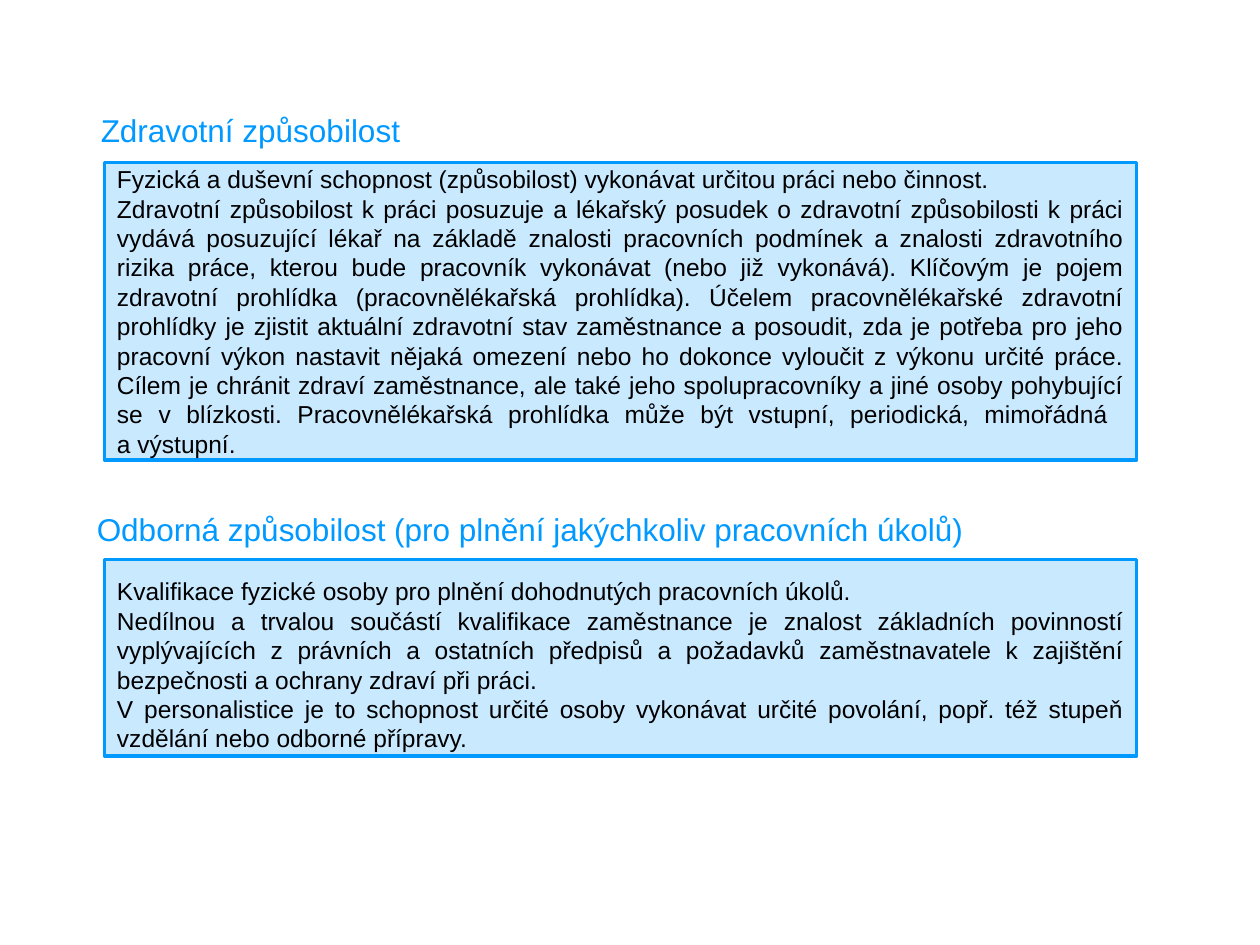
from pptx import Presentation, util as u
from pptx.dml.color import RGBColor
from pptx.enum import shapes, text

COLORS = {"accent": "0099FF", "panel": "C9E9FF", "text": "000000", "paper": "FFFFFF"}
COLS, ROWS = 100, 75
PANEL_LEFT, PANEL_WIDTH = 8.3, 81.9

HEALTH = [
    "Fyzická a duševní schopnost (způsobilost) vykonávat určitou práci nebo činnost.",
    "Zdravotní způsobilost k práci posuzuje a lékařský posudek o zdravotní způsobilosti "
    "k práci vydává posuzující lékař na základě znalosti pracovních podmínek a znalosti "
    "zdravotního rizika práce, kterou bude pracovník vykonávat (nebo již vykonává). "
    "Klíčovým je pojem zdravotní prohlídka (pracovnělékařská prohlídka). Účelem "
    "pracovnělékařské zdravotní prohlídky je zjistit aktuální zdravotní stav zaměstnance "
    "a posoudit, zda je potřeba pro jeho pracovní výkon nastavit nějaká omezení nebo ho "
    "dokonce vyloučit z výkonu určité práce. Cílem je chránit zdraví zaměstnance, ale také "
    "jeho spolupracovníky a jiné osoby pohybující se v blízkosti. Pracovnělékařská "
    "prohlídka může být vstupní, periodická, mimořádná \va výstupní.",
]
SKILLS = [
    "Kvalifikace fyzické osoby pro plnění dohodnutých pracovních úkolů.",
    "Nedílnou a trvalou součástí kvalifikace zaměstnance je znalost základních povinností "
    "vyplývajících z právních a ostatních předpisů a požadavků zaměstnavatele k zajištění "
    "bezpečnosti a ochrany zdraví při práci.",
    "V personalistice je to schopnost určité osoby vykonávat určité povolání, popř. též "
    "stupeň vzdělání nebo odborné přípravy.",
]


class Deck:
    """Holds the text style and the current slide; lengths are grid columns and rows."""

    font = "Arial"

    def __init__(self):
        self.prs = Presentation()
        self.prs.slide_width, self.prs.slide_height = u.Inches(10), u.Inches(7.5)
        self.s = self.prs.slides.add_slide(self.prs.slide_layouts[5])

    def place(self, left, top, width, height):
        dx, dy = self.prs.slide_width / COLS, self.prs.slide_height / ROWS
        return [round(v) for v in (left * dx, top * dy, width * dx, height * dy)]

    def paint(self, fmt, color):
        fmt.solid()
        fmt.fore_color.rgb = RGBColor.from_string(COLORS[color])

    def fill_text(self, sp, paragraphs, size, color, align, **frame):
        tf = sp.text_frame
        tf.text = "\n".join(paragraphs)
        for name, value in {"auto_size": text.MSO_AUTO_SIZE.NONE, **frame}.items():
            setattr(tf, name, value)
        for p in tf.paragraphs:
            p.alignment = align
            for r in p.runs:
                r.font.name, r.font.size = self.font, u.Pt(size)
                r.font.color.rgb = RGBColor.from_string(COLORS[color])

    def heading(self, words, *at, title=False):
        box = self.place(*at)
        sp = self.s.shapes.title if title else self.s.shapes.add_textbox(*box)
        sp.left, sp.top, sp.width, sp.height = box
        self.paint(sp.fill, "paper")
        self.fill_text(sp, [words], 18, "accent", text.PP_ALIGN.LEFT,
                       word_wrap=False, vertical_anchor=text.MSO_ANCHOR.TOP)

    def panel(self, paragraphs, top, height, inset=0):
        """Draw a framed text box; inset is the space above the text in inches."""
        at = self.place(PANEL_LEFT, top, PANEL_WIDTH, height)
        sp = self.s.shapes.add_shape(shapes.MSO_SHAPE.RECTANGLE, *at)
        sp.shadow.inherit = False
        self.paint(sp.fill, "panel")
        self.paint(sp.line.fill, "accent")
        sp.line.width = u.Pt(2)
        self.fill_text(sp, paragraphs, 14, "text", text.PP_ALIGN.JUSTIFY,
                       word_wrap=True, vertical_anchor=text.MSO_ANCHOR.MIDDLE,
                       margin_top=u.Inches(inset), margin_bottom=0)


def main():
    deck = Deck()
    deck.heading("Zdravotní způsobilost", 7, 8.3, 26.8, 4, title=True)
    deck.panel(HEALTH, 12.9, 23.6)
    deck.panel(SKILLS, 44.4, 15.6, inset=0.11)
    deck.heading("Odborná způsobilost (pro plnění jakýchkoliv pracovních úkolů)",
                 6.7, 40, 71.4, 4)
    deck.prs.save("out.pptx")


if __name__ == "__main__":
    main()
